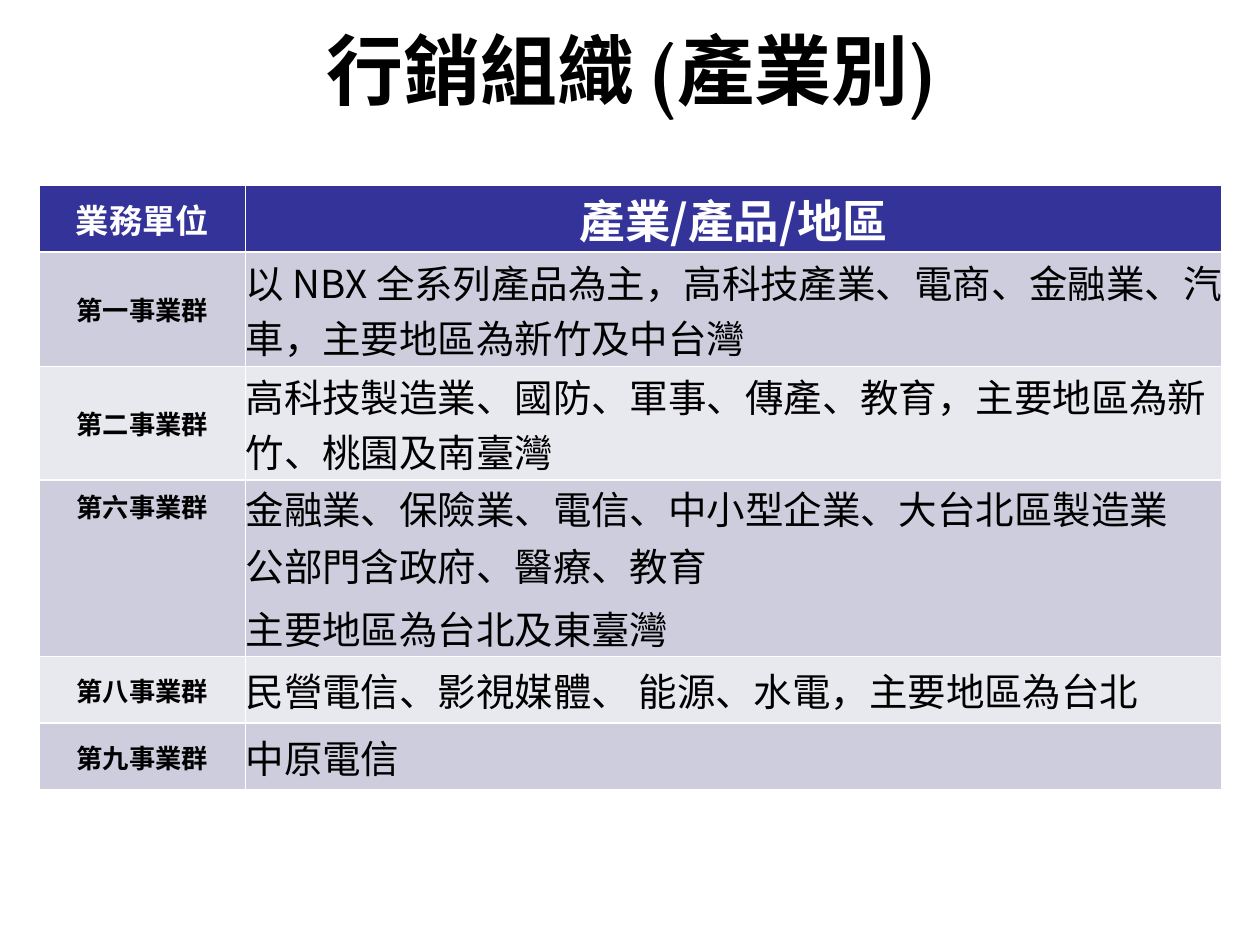
from pptx import Presentation as Deck
from pptx.dml.color import RGBColor as Rgb
from pptx.enum.text import MSO_ANCHOR as Anchor, PP_ALIGN as Align
from pptx.oxml.ns import qn
from pptx.util import Inches, Pt
from lxml.etree import SubElement as Sub

HUES = {"navy": "333399", "lilac": "CDCDDE", "pale": "E8E8EF",
        "white": "FFFFFF", "black": "000000"}
SANS, SERIF = "Noto Sans CJK SC", "Vollkorn"
WIDE = [1.64, 7.75]
ROWS = [
    (0.53, "navy", "業務單位", "產業/產品/地區"),
    (0.91, "lilac", "第一事業群",
     "以 NBX 全系列產品為主，高科技產業、電商、金融業、汽車，主要地區為新竹及中台灣"),
    (0.9, "pale", "第二事業群",
     "高科技製造業、國防、軍事、傳產、教育，主要地區為新竹、桃園及南臺灣"),
    (0.41, "lilac", "第六事業群", "金融業、保險業、電信、中小型企業、大台北區製造業"),
    (0.53, "lilac", "", "公部門含政府、醫療、教育"),
    (0.46, "lilac", "", "主要地區為台北及東臺灣"),
    (0.53, "pale", "第八事業群", "民營電信、影視媒體、 能源、水電，主要地區為台北"),
    (0.53, "lilac", "第九事業群", "中原電信"),
]
HEAD = [{"size": 19, "bold": True, "hue": "white", "align": Align.CENTER},
        {"size": 26, "bold": True, "hue": "white", "align": Align.CENTER}]
BODY = [{"size": 15, "bold": True, "hue": "black", "align": Align.CENTER},
        {"size": 22, "bold": False, "hue": "black", "align": Align.LEFT}]


class Page:
    def __init__(self, deck):
        self.slide = deck.slides.add_slide(deck.slide_layouts[6])

    def text(self, frame, words, size, bold, hue, align, face=SANS):
        para = frame.paragraphs[0]
        para.alignment = align
        run = para.add_run()
        run.text = words
        for key, val in {"size": Pt(size), "bold": bold, "name": face}.items():
            setattr(run.font, key, val)
        run.font.color.rgb = Rgb.from_string(HUES[hue])
        Sub(run._r.get_or_add_rPr(), qn("a:ea")).set("typeface", SANS)

    def title(self, words, left, top, width, height):
        box = self.slide.shapes.add_textbox(*map(Inches, (left, top, width, height)))
        frame = box.text_frame
        frame.word_wrap = True
        frame.vertical_anchor = Anchor.MIDDLE
        self.text(frame, words, 44, True, "black", Align.CENTER, SERIF)

    def edge(self, cell, side, width):
        line = Sub(cell._tc.get_or_add_tcPr(), qn("a:ln" + side), w=str(int(Pt(width))))
        if width:
            fill = Sub(line, qn("a:solidFill"))
            Sub(fill, qn("a:srgbClr"), val=HUES["white"])
        else:
            Sub(line, qn("a:noFill"))

    def cell(self, cell, words, fill, look, top, base):
        for side in ("left", "top", "right", "bottom"):
            setattr(cell, "margin_" + side, 0)
        cell.vertical_anchor = Anchor.MIDDLE
        for side, width in {"L": 1, "R": 1, "T": top, "B": base}.items():
            self.edge(cell, side, width)
        cell.fill.solid()
        cell.fill.fore_color.rgb = Rgb.from_string(HUES[fill])
        if words:
            self.text(cell.text_frame, words, **look)

    def table(self, rows, left, top):
        high = sum(row[0] for row in rows)
        size = map(Inches, (left, top, sum(WIDE), high))
        grid = self.slide.shapes.add_table(len(rows), len(WIDE), *size).table
        grid.first_row = grid.horz_banding = False
        for col, width in zip(grid.columns, WIDE):
            col.width = Inches(width)
        rules = [1, 1.5] + [1 if row[2] else 0 for row in rows[2:]] + [1]
        for i, (tall, fill, *texts) in enumerate(rows):
            grid.rows[i].height = Inches(tall)
            looks = BODY if i else HEAD
            for j, (words, look) in enumerate(zip(texts, looks)):
                self.cell(grid.cell(i, j), words, fill, look, rules[i], rules[i + 1])


def main():
    deck = Deck()
    deck.slide_width, deck.slide_height = Inches(10), Inches(7.5)
    page = Page(deck)
    page.title("行銷組織 (產業別)", 0.5, 0.17, 9, 0.75)
    page.table(ROWS, 0.31, 1.47)
    deck.save("out.pptx")


if __name__ == "__main__":
    main()
